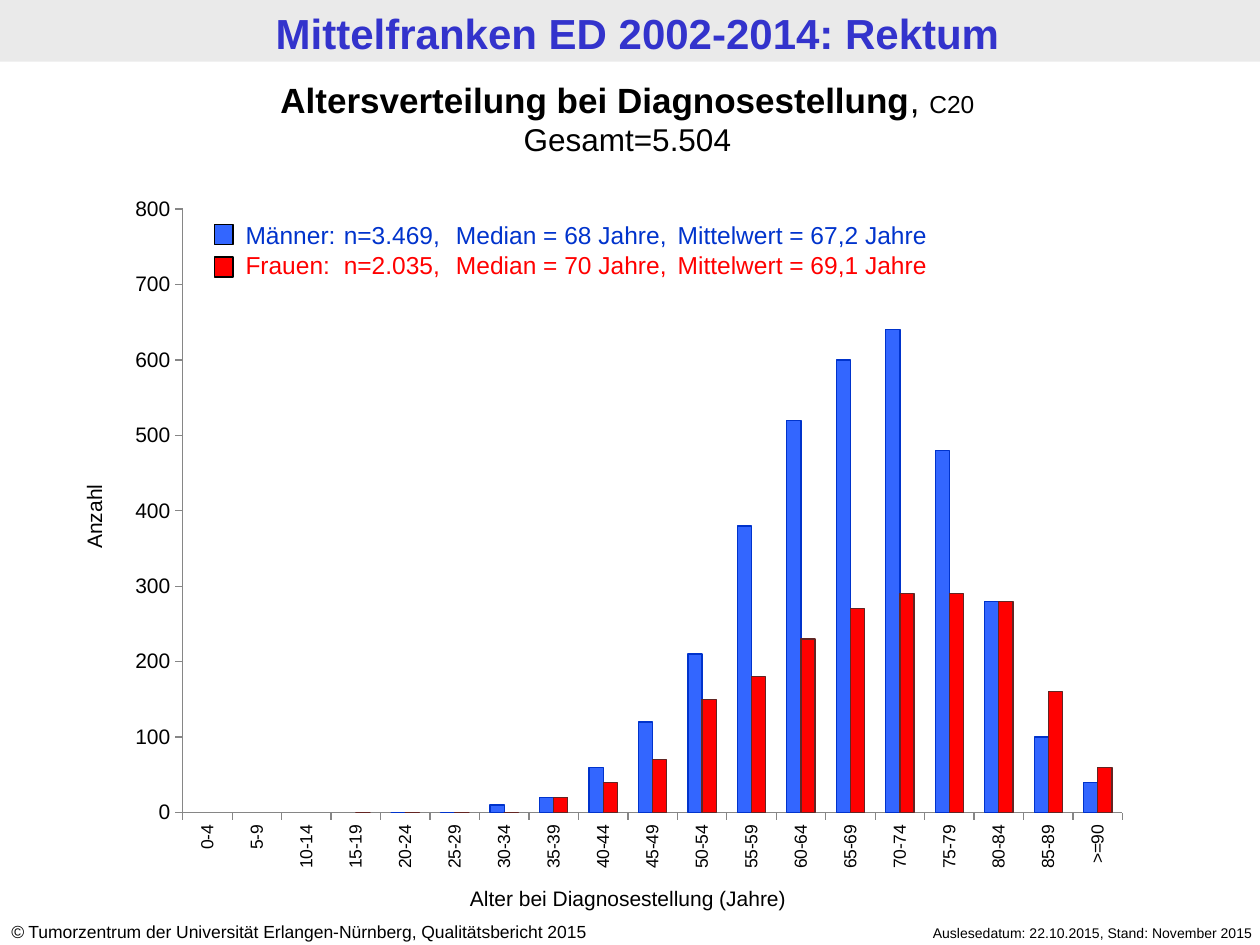
import pptx
import pptx.chart.data
import pptx.dml.color
import pptx.enum.chart
import pptx.enum.shapes
import pptx.enum.text
import pptx.oxml
import pptx.oxml.ns
import pptx.util
from lxml import etree

Inches = pptx.util.Inches
Pt = pptx.util.Pt
ALIGN = pptx.enum.text.PP_ALIGN

THEME = {
    "font": "Arial", "chart_font": "Calibri",
    "black": "000000", "white": "FFFFFF", "bar": "EAEAEA", "title": "3333CC",
    "axis": "868686", "men": "3366FF", "men_dark": "0033CC",
    "women": "FF0000", "women_dark": "632523",
    "title_pt": 24, "heading_pt": 20, "total_pt": 18, "legend_pt": 14,
    "label_pt": 12, "small_pt": 10, "note_pt": 8,
}

TITLE = "Mittelfranken ED 2002-2014: Rektum"
HEADING = [
    [("Altersverteilung bei Diagnosestellung", "heading_pt", "black", "b"),
     (", ", "heading_pt", "black", ""), ("C20", "legend_pt", "black", "")],
    [("Gesamt=5.504", "total_pt", "black", "")],
]
LEGEND = [
    [("Männer: \tn=3.469, \tMedian = 68 Jahre, \tMittelwert = 67,2 Jahre",
      "legend_pt", "men_dark", "")],
    [("Frauen: \tn=2.035, \tMedian = 70 Jahre,\tMittelwert = 69,1 Jahre",
      "legend_pt", "women", "")],
]
LEGEND_TABS = [0.78, 0.88, 1.67, 3.43]
X_LABEL = [[("Alter bei Diagnosestellung (Jahre)", "label_pt", "black", "")]]
Y_LABEL = [[("Anzahl", "label_pt", "black", "")]]
SOURCE = [[("©", "small_pt", "black", "i"),
           (" Tumorzentrum der Universität Erlangen-Nürnberg, Qualitätsbericht 2015",
            "small_pt", "black", "")]]
DATES = [[("Auslesedatum: 22.10.2015, Stand: November 2015", "note_pt", "black", "")]]

AGES = [f"{a}-{a + 4}" for a in range(0, 90, 5)] + [">=90"]
SERIES = [
    ("Männer", "men", "men_dark",
     [None, None, None, None, 0, 0, 10, 20, 60, 120, 210, 380, 520, 600, 640,
      480, 280, 100, 40]),
    ("Frauen", "women", "women_dark",
     [None, None, None, 0, 0, 0, 0, 20, 40, 70, 150, 180, 230, 270, 290, 290,
      280, 160, 60]),
]
CHART_BOX = (0.91, 1.47, 8.16, 5.55)
PLOT_BOX = (1.45, 1.66, 7.46, 4.79)


def color(name):
    return pptx.dml.color.RGBColor.from_string(THEME[name])


def box(*values):
    return [Inches(v) for v in values]


def style(font, size, name, marks=""):
    font.name, font.size = THEME["font"], Pt(THEME[size])
    font.color.rgb = color(name)
    font.bold, font.italic = "b" in marks, "i" in marks


def set_tabs(p, stops):
    tabs = etree.SubElement(p._p.get_or_add_pPr(), pptx.oxml.ns.qn("a:tabLst"))
    for stop in stops:
        etree.SubElement(tabs, pptx.oxml.ns.qn("a:tab"), pos=str(Inches(stop)), algn="l")


def write(tf, paragraphs, align, tabs=()):
    for i, runs in enumerate(paragraphs):
        p = tf.paragraphs[0] if i == 0 else tf.add_paragraph()
        p.alignment = align
        if tabs:
            set_tabs(p, tabs)
        for text, size, name, marks in runs:
            r = p.add_run()
            r.text = text
            style(r.font, size, name, marks)


def add_text(s, at, paragraphs, align=ALIGN.LEFT, tabs=(), rotation=0):
    sp = s.shapes.add_textbox(*box(*at))
    sp.rotation = rotation
    sp.text_frame.word_wrap = True
    write(sp.text_frame, paragraphs, align, tabs)


def add_rect(s, at, fill, line=None):
    sp = s.shapes.add_shape(pptx.enum.shapes.MSO_SHAPE.RECTANGLE, *box(*at))
    sp.shadow.inherit = False
    sp.fill.solid()
    sp.fill.fore_color.rgb = color(fill)
    if line:
        sp.line.color.rgb, sp.line.width = color(line), Pt(0.75)
    else:
        sp.line.fill.background()
    return sp


def fix_plot_area(chart):
    qn = pptx.oxml.ns.qn
    area = chart._chartSpace.chart.plotArea
    for old in area.findall(qn("c:layout")):
        area.remove(old)
    layout = etree.Element(qn("c:layout"))
    manual = etree.SubElement(layout, qn("c:manualLayout"))
    left, top, width, height = CHART_BOX
    x, y, w, h = PLOT_BOX
    settings = [("layoutTarget", "inner"), ("xMode", "edge"), ("yMode", "edge"),
                ("x", (x - left) / width), ("y", (y - top) / height),
                ("w", w / width), ("h", h / height)]
    for tag, value in settings:
        etree.SubElement(manual, qn("c:" + tag), val=str(value))
    area.insert(0, layout)
    area.append(pptx.oxml.parse_xml(
        f'<c:spPr {pptx.oxml.ns.nsdecls("c", "a")}><a:solidFill>'
        f'<a:srgbClr val="{THEME["white"]}"/></a:solidFill></c:spPr>'))


def add_age_chart(s):
    data = pptx.chart.data.CategoryChartData()
    data.categories = AGES
    for name, _, _, values in SERIES:
        data.add_series(name, values)
    chart = s.shapes.add_chart(pptx.enum.chart.XL_CHART_TYPE.COLUMN_CLUSTERED,
                               *box(*CHART_BOX), data).chart
    chart.has_legend = chart.has_title = False
    chart.font.name, chart.font.size = THEME["chart_font"], Pt(THEME["total_pt"])
    chart.font.color.rgb = color("black")
    plot = chart.plots[0]
    plot.vary_by_categories = False
    plot.gap_width, plot.overlap = 150, 0
    for ser, (_, fill, line, _) in zip(plot.series, SERIES):
        ser.format.fill.solid()
        ser.format.fill.fore_color.rgb = color(fill)
        ser.format.line.color.rgb, ser.format.line.width = color(line), Pt(0.75)
    for axis, size in ((chart.category_axis, "small_pt"), (chart.value_axis, "label_pt")):
        axis.has_major_gridlines = False
        axis.major_tick_mark = pptx.enum.chart.XL_TICK_MARK.OUTSIDE
        axis.format.line.color.rgb, axis.format.line.width = color("axis"), Pt(0.75)
        style(axis.tick_labels.font, size, "black")
    chart.category_axis._element.txPr.bodyPr.set("rot", "-5400000")
    value_axis = chart.value_axis
    value_axis.minimum_scale, value_axis.maximum_scale = 0, 800
    value_axis.major_unit = 100
    fix_plot_area(chart)


def main():
    prs = pptx.Presentation()
    prs.slide_width, prs.slide_height = box(10, 7.5)
    s = prs.slides.add_slide(prs.slide_layouts[5])

    bar = add_rect(s, (0, 0, 10, 0.49), "bar")
    s.shapes._spTree.insert(2, bar._element)
    title = s.shapes.title
    title.left, title.top, title.width, title.height = box(0.06, 0.01, 10, 0.49)
    tf = title.text_frame
    tf.margin_top = tf.margin_bottom = Inches(0.05)
    tf.vertical_anchor = pptx.enum.text.MSO_ANCHOR.TOP
    tf.auto_size = pptx.enum.text.MSO_AUTO_SIZE.NONE
    write(tf, [[(TITLE, "title_pt", "title", "b")]], ALIGN.CENTER)

    add_text(s, (6.65, 7.29, 3.39, 0.24), DATES, ALIGN.RIGHT)
    add_text(s, (-0.01, 7.26, 5.24, 0.27), SOURCE)
    add_age_chart(s)
    add_text(s, (-0.04, 0.57, 10.04, 0.74), HEADING, ALIGN.CENTER)
    add_text(s, (1.85, 1.7, 6.85, 0.57), LEGEND, tabs=LEGEND_TABS)
    add_text(s, (3.45, 6.98, 3.07, 0.3), X_LABEL, ALIGN.CENTER)
    for i, (_, fill, _, _) in enumerate(SERIES):
        add_rect(s, (1.7, 1.78 + 0.26 * i, 0.15, 0.16), fill, "black")
    add_text(s, (-0.56, 3.95, 2.61, 0.3), Y_LABEL, ALIGN.CENTER, rotation=270)
    prs.save("out.pptx")


if __name__ == "__main__":
    main()
